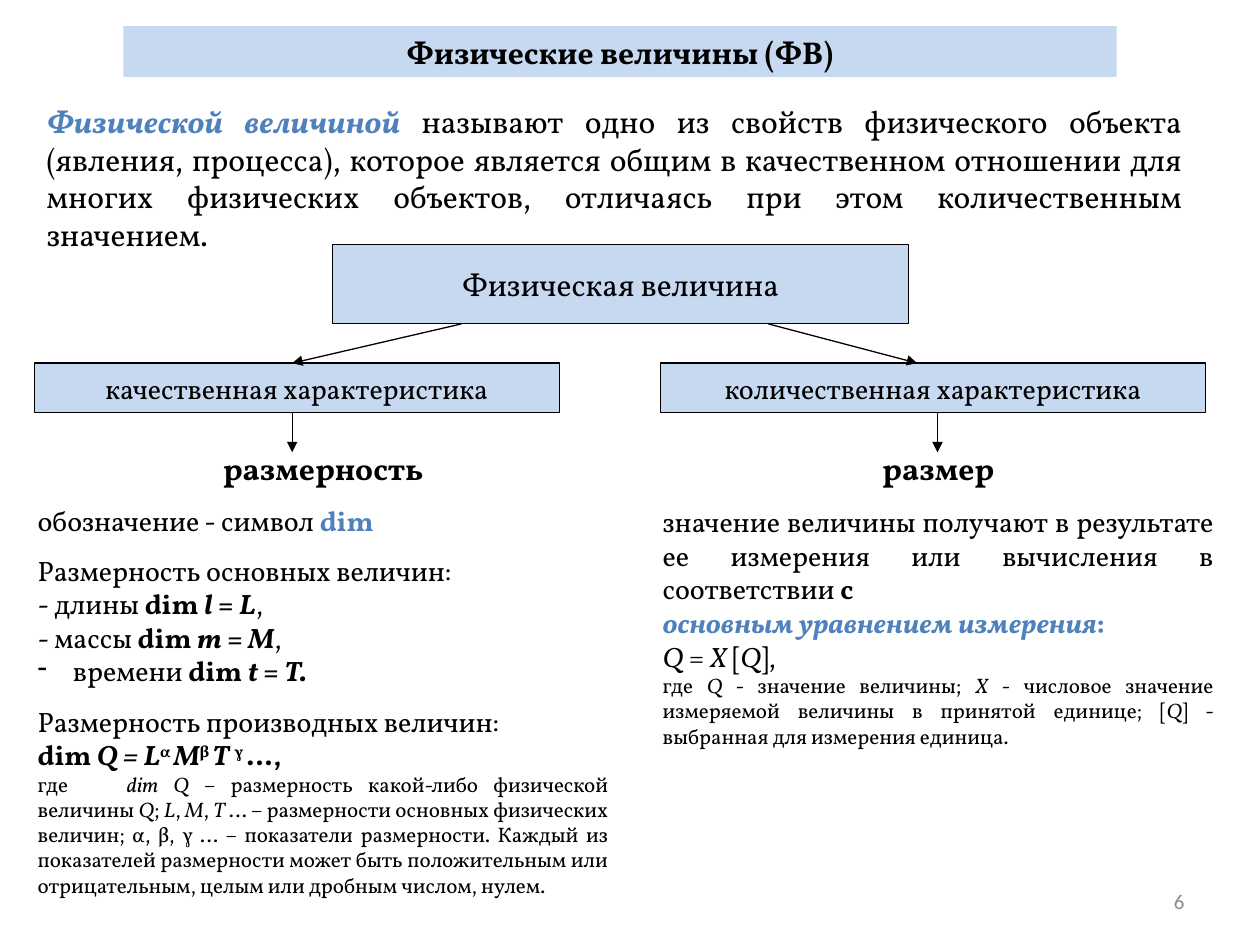
from lxml import etree
from pptx import Presentation
from pptx.dml.color import RGBColor
from pptx.enum.shapes import MSO_CONNECTOR, MSO_SHAPE
from pptx.enum.text import MSO_ANCHOR as Anchor, MSO_AUTO_SIZE as AutoSize, PP_ALIGN as Align
from pptx.oxml.ns import qn
from pptx.util import Cm, Pt

BLACK = RGBColor(0x00, 0x00, 0x00)
GRAY = RGBColor(0x8C, 0x8C, 0x8C)
ACCENT = RGBColor(0x4F, 0x81, 0xBD)
PALE = RGBColor(0xC6, 0xD9, 0xF1)


class Diagram:
    """Current slide and its style.

    Runs are (text, style) pairs; style letters: b bold, i italic,
    a accent colour, s superscript.
    """

    font, line_width = "Vollkorn", Pt(0.75)

    def __init__(self, slide):
        self.s = slide

    def format_run(self, r, size, style="", color=BLACK):
        r.font.name = self.font
        r.font.size = Pt(size)
        r.font.bold = "b" in style
        r.font.italic = "i" in style
        r.font.color.rgb = ACCENT if "a" in style else color
        if "s" in style:
            r._r.get_or_add_rPr().set("baseline", "30000")

    def box(self, text, left, top, width, height, size, style="", outline=True):
        sp = self.s.shapes.add_shape(
            MSO_SHAPE.RECTANGLE, Cm(left), Cm(top), Cm(width), Cm(height))
        sp.shadow.inherit = False
        sp.fill.solid()
        sp.fill.fore_color.rgb = PALE
        if outline:
            sp.line.color.rgb = BLACK
            sp.line.width = self.line_width
        else:
            sp.line.fill.background()
        tf = sp.text_frame
        tf.word_wrap = not outline
        tf.vertical_anchor = Anchor.MIDDLE
        tf.text = text
        p = tf.paragraphs[0]
        p.alignment = Align.CENTER
        self.format_run(p.runs[0], size, style)

    def arrow(self, x1, y1, x2, y2):
        line = self.s.shapes.add_connector(
            MSO_CONNECTOR.STRAIGHT, Cm(x1), Cm(y1), Cm(x2), Cm(y2))
        line.line.color.rgb = BLACK
        line.line.width = self.line_width
        etree.SubElement(line.line._get_or_add_ln(), qn("a:tailEnd"), type="triangle")
        etree.SubElement(line._element.spPr, qn("a:effectLst"))

    def text_box(self, left, top, width, height):
        tf = self.s.shapes.add_textbox(
            Cm(left), Cm(top), Cm(width), Cm(height)).text_frame
        tf.word_wrap = True
        return tf

    def page_number(self, text, left, top, width, height):
        tf = self.text_box(left, top, width, height)
        tf.vertical_anchor = Anchor.MIDDLE
        tf.text = text
        p = tf.paragraphs[0]
        p.alignment = Align.RIGHT
        self.format_run(p.runs[0], 12, color=GRAY)
        p.runs[0].font.name = "Calibri"

    def rich_text(self, left, top, width, height, paragraphs):
        """Each paragraph is (size, alignment, space before, runs)."""
        tf = self.text_box(left, top, width, height)
        tf.auto_size = AutoSize.SHAPE_TO_FIT_TEXT
        for n, (size, align, before, runs) in enumerate(paragraphs):
            p = tf.add_paragraph() if n else tf.paragraphs[0]
            p.alignment = align
            p.space_before = Pt(before)
            for text, style in runs:
                r = p.add_run()
                r.text = text
                self.format_run(r, size, style)
        return tf

    def dash(self, p, indent):
        pPr = p._p.get_or_add_pPr()
        pPr.set("marL", str(Cm(indent)))
        pPr.set("indent", str(-Cm(indent)))
        etree.SubElement(pPr, qn("a:buChar"), char="-")

    def tab_stop(self, p, position):
        tabs = etree.SubElement(p._p.get_or_add_pPr(), qn("a:tabLst"))
        etree.SubElement(tabs, qn("a:tab"), pos=str(Cm(position)), algn="l")


def dimension(name, symbol, result, end=(",", "")):
    return [(name, ""), ("dim ", "b"), (symbol, "bi"), (" = ", "b"), (result, "bi"), end]


def main():
    prs = Presentation()
    prs.slide_width, prs.slide_height = Cm(25.4), Cm(19.05)
    d = Diagram(prs.slides.add_slide(prs.slide_layouts[6]))
    left, center, justify = Align.LEFT, Align.CENTER, Align.JUSTIFY

    d.page_number("6", 18.21, 17.65, 5.92, 1.02)
    d.box("Физические величины (ФВ)", 2.49, 0.53, 20.02, 1.02, 18, "b", outline=False)
    d.rich_text(0.69, 1.93, 23.39, 3.3, [
        (18, justify, 0, [
            ("Физической величиной ", "bia"),
            ("называют одно из свойств физического объекта (явления, процесса), "
             "которое является общим в качественном отношении для многих физических "
             "объектов, отличаясь при этом количественным значением.", "")]),
    ])

    root_bottom, branch_top, branch_bottom = 6.53, 7.32, 8.32
    d.box("Физическая величина", 6.71, 4.93, 11.61, 1.6, 18)
    branches = [
        ("качественная характеристика", 0.69, 10.59, 9.3, 5.89, 5.89),
        ("количественная характеристика", 13.31, 11, 15.49, 18.49, 18.9),
    ]
    for text, x, width, x_from, x_to, x_down in branches:
        d.box(text, x, branch_top, width, branch_bottom - branch_top, 16)
        d.arrow(x_from, root_bottom, x_to, branch_top)
        d.arrow(x_down, branch_bottom, x_down, 9.12)

    tf = d.rich_text(0.51, 8.92, 12.01, 9.83, [
        (18, center, 0, [("размерность", "b")]),
        (16, left, 9.5, [("обозначение - символ ", ""), ("dim", "ba")]),
        (16, left, 9.5, [("Размерность основных величин:", "")]),
        (16, left, 0, dimension("- длины ", "l", "L")),
        (16, left, 0, dimension("- массы ", "т", "М")),
        (16, left, 0, dimension(" времени ", "t", "Т", (".", "bi"))),
        (16, left, 9.5, [("Размерность производных величин:", "")]),
        (16, left, 0, [
            ("dim", "b"), (" Q = L", "bi"), ("α ", "bs"), ("M", "bi"), ("β ", "bs"),
            ("T ", "bi"), ("γ ", "bs"), ("…,", "b")]),
        (12, justify, 0, [
            ("где\t", ""), ("dim Q", "i"),
            (" – размерность какой-либо физической величины ", ""), ("Q", "i"),
            ("; ", ""), ("L", "i"), (", ", ""), ("M", "i"), (", ", ""), ("T ", "i"),
            ("… – размерности основных физических величин; α, β, γ … – показатели "
             "размерности. Каждый из показателей размерности может быть "
             "положительным или отрицательным, целым или дробным числом, нулем.", "")]),
    ])
    d.dash(tf.paragraphs[5], 0.6)
    d.tab_stop(tf.paragraphs[8], 1.8)

    d.rich_text(13.11, 8.92, 11.61, 6.32, [
        (18, center, 0, [("размер", "b")]),
        (16, justify, 10.5, [
            ("значение величины получают в результате ее измерения или вычисления "
             "в соответствии ", ""), ("с", "b")]),
        (16, left, 0, [("основным уравнением измерения", "bia"), (":", "ba")]),
        (16, left, 0, [("Q", "i"), (" = ", ""), ("X", "i"), (" [", ""), ("Q", "i"), ("],", "")]),
        (12, justify, 0, [
            ("где ", ""), ("Q", "i"), (" - значение величины; ", ""), ("X", "i"),
            (" - числовое значение измеряемой величины в принятой единице; [", ""),
            ("Q", "i"), ("] - выбранная для измерения единица.", "")]),
    ])
    prs.save("out.pptx")


if __name__ == "__main__":
    main()
